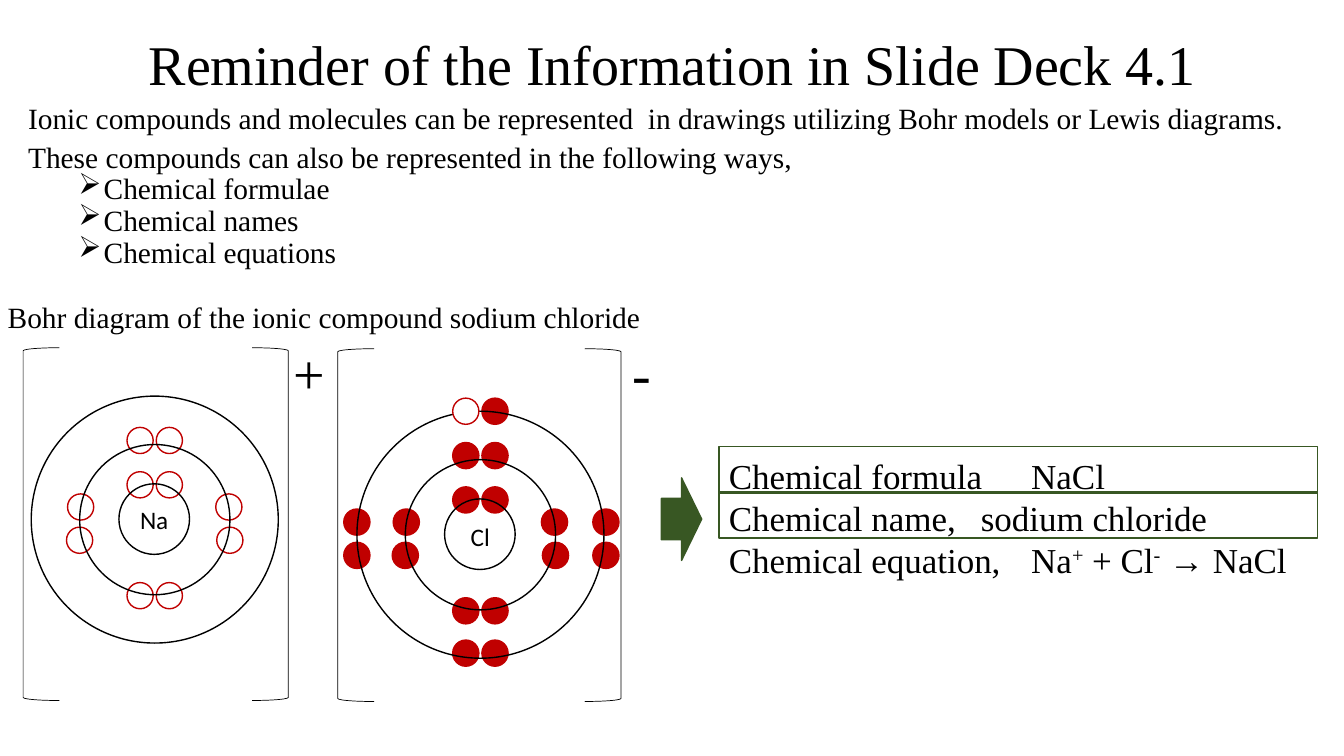
from dataclasses import dataclass
from typing import Optional

from lxml.etree import SubElement
from pptx import Presentation
from pptx.dml.color import RGBColor
from pptx.enum.shapes import MSO_SHAPE as Preset
from pptx.enum.text import MSO_ANCHOR as Anchor, MSO_AUTO_SIZE as AutoSize, PP_ALIGN as Align
from pptx.oxml.ns import qn
from pptx.util import Emu, Pt

PX = 9144
BLACK, WHITE, RED, GREEN = "000000", "FFFFFF", "C00000", "385723"
SERIF, SANS = "Times New Roman", "Calibri"
ELECTRON = 26
SHELLS = (70, 149, 245)
PAIR = (-14, 15)
SIDE = (-12, 21)
INNER = [(x, -34) for x in PAIR]
MIDDLE = [(x, y) for y in (-78, 76) for x in PAIR] + [
    (x + shift, y) for x in (-73, 74) for shift, y in zip((0, 1 if x > 0 else -1), SIDE)]
OUTER = [(PAIR[1], -122)] + [(x, 118) for x in PAIR] + [(x, y) for x in (-122, 125) for y in SIDE]


@dataclass
class Line:
    """A paragraph, given as (text, superscript) spans."""
    spans: list[tuple[str, bool]]
    before: int = 0
    bullet: bool = False


@dataclass
class TextBlock:
    """A text box with one font."""
    box: tuple[int, int, int, int]
    lines: list[Line]
    size: int
    font: str = SERIF
    align: Align = Align.LEFT
    spacing: Optional[float] = None
    anchor: Anchor = Anchor.TOP
    wrap: bool = False


@dataclass
class Ion:
    """A bracketed Bohr model with its charge."""
    symbol: str
    symbol_box: tuple[int, int, int, int]
    centre: tuple[int, int]
    electrons: list[tuple[int, int]]
    electron_fill: str
    brackets: tuple[int, int, int]
    charge: str
    charge_box: tuple[int, int, int, int]


def colour(value: str) -> RGBColor:
    """Turn a hex string into a colour."""
    return RGBColor.from_string(value)


def emu(box: tuple[int, int, int, int]) -> list[Emu]:
    """Scale px lengths to EMU."""
    return [Emu(length * PX) for length in box]


def plain(text: str, before: int = 0, bullet: bool = False) -> Line:
    """Make a line of one span."""
    return Line([(text, False)], before, bullet)


def add_shape(page, preset: Preset, box: tuple[int, int, int, int], line: str,
              fill: Optional[str] = None, width: float = 1) -> None:
    """Draw an outlined preset shape."""
    shape = page.shapes.add_shape(preset, *emu(box))
    shape.shadow.inherit = False
    if fill:
        shape.fill.solid()
        shape.fill.fore_color.rgb = colour(fill)
    else:
        shape.fill.background()
    shape.line.color.rgb = colour(line)
    shape.line.width = Pt(width)


def add_text(page, block: TextBlock) -> None:
    """Draw a text block."""
    frame = page.shapes.add_textbox(*emu(block.box)).text_frame
    frame.word_wrap = block.wrap
    frame.auto_size = AutoSize.NONE if block.wrap else AutoSize.SHAPE_TO_FIT_TEXT
    frame.vertical_anchor = block.anchor
    for index, line in enumerate(block.lines):
        para = frame.add_paragraph() if index else frame.paragraphs[0]
        para.alignment = block.align
        if block.spacing:
            para.line_spacing = block.spacing
        if line.before:
            para.space_before = Pt(line.before)
        if line.bullet:
            para.level = 1
            properties = para._p.get_or_add_pPr()
            properties.set("marL", str(75 * PX))
            properties.set("indent", str(-25 * PX))
            SubElement(properties, qn("a:buChar")).set("char", "➢")
        para.font.size = Pt(block.size)
        para.font.name = block.font
        para.font.color.rgb = colour(BLACK)
        for text, raised in line.spans:
            span = para.add_run()
            span.text = text
            if raised:
                span._r.get_or_add_rPr().set("baseline", "30000")


def add_electron(page, centre: tuple[int, int], offset: tuple[int, int], fill: str) -> None:
    """Draw an electron at an offset from the nucleus."""
    left, top = (c + o - ELECTRON // 2 for c, o in zip(centre, offset))
    add_shape(page, Preset.OVAL, (left, top, ELECTRON, ELECTRON), RED, fill)


def add_ion(page, ion: Ion) -> None:
    """Draw the symbol, electrons, shells, brackets and charge of an ion."""
    add_text(page, TextBlock(ion.symbol_box, [plain(ion.symbol)], 18, SANS))
    for offset in ion.electrons:
        add_electron(page, ion.centre, offset, ion.electron_fill)
    for shell in SHELLS:
        left, top = (c - shell // 2 for c in ion.centre)
        add_shape(page, Preset.OVAL, (left, top, shell, shell), BLACK)
    opening, closing, top = ion.brackets
    for preset, left in ((Preset.LEFT_BRACKET, opening), (Preset.RIGHT_BRACKET, closing)):
        add_shape(page, preset, (left, top, 36, 350), BLACK, width=0.5)
    add_text(page, TextBlock(ion.charge_box, [plain(ion.charge)], 40))


TEXTS = [
    TextBlock((18, 15, 1298, 104), [plain("Reminder of the Information in Slide Deck 4.1")], 40,
              align=Align.CENTER, spacing=0.9, anchor=Anchor.MIDDLE, wrap=True),
    TextBlock((18, 104, 1298, 204), [
        plain("Ionic compounds and molecules can be represented  in drawings utilizing "
              "Bohr models or Lewis diagrams."),
        plain("These compounds can also be represented in the following ways,", 10),
        *(plain(f"Chemical {way}", 5, True) for way in ("formulae", "names", "equations")),
    ], 21, spacing=0.7, wrap=True),
    TextBlock((-10, 292, 663, 45), [plain("Bohr diagram of the ionic compound sodium chloride")], 21,
              align=Align.CENTER),
    TextBlock((713, 446, 594, 136), [
        plain("Chemical formula \tNaCl"),
        plain("Chemical name,\tsodium chloride"),
        Line([("Chemical equation,\tNa", False), ("+", True), (" + Cl", False),
              ("-", True), (" → NaCl", False)]),
    ], 25),
]
SODIUM = Ion("Na", (129, 495, 49, 40), (153, 515), INNER + MIDDLE, WHITE,
             (23, 250, 345), "+", (281, 331, 52, 77))
CHLORIDE = Ion("Cl", (457, 512, 39, 40), (476, 530), INNER + MIDDLE + OUTER, RED,
               (335, 580, 346), "-", (617, 331, 39, 77))


def main() -> None:
    """Build the slide and save it."""
    deck = Presentation()
    deck.slide_width, deck.slide_height = Emu(1333 * PX), Emu(750 * PX)
    page = deck.slides.add_slide(deck.slide_layouts[6])
    for block in TEXTS:
        add_text(page, block)
    for ion in (SODIUM, CHLORIDE):
        add_ion(page, ion)
    add_electron(page, CHLORIDE.centre, (PAIR[0], -122), WHITE)
    add_shape(page, Preset.RIGHT_ARROW, (656, 474, 40, 82), GREEN, GREEN)
    for row in range(2):
        add_shape(page, Preset.RECTANGLE, (713, 443 + 45 * row, 594, 46), GREEN)
    deck.save("out.pptx")


if __name__ == "__main__":
    main()
